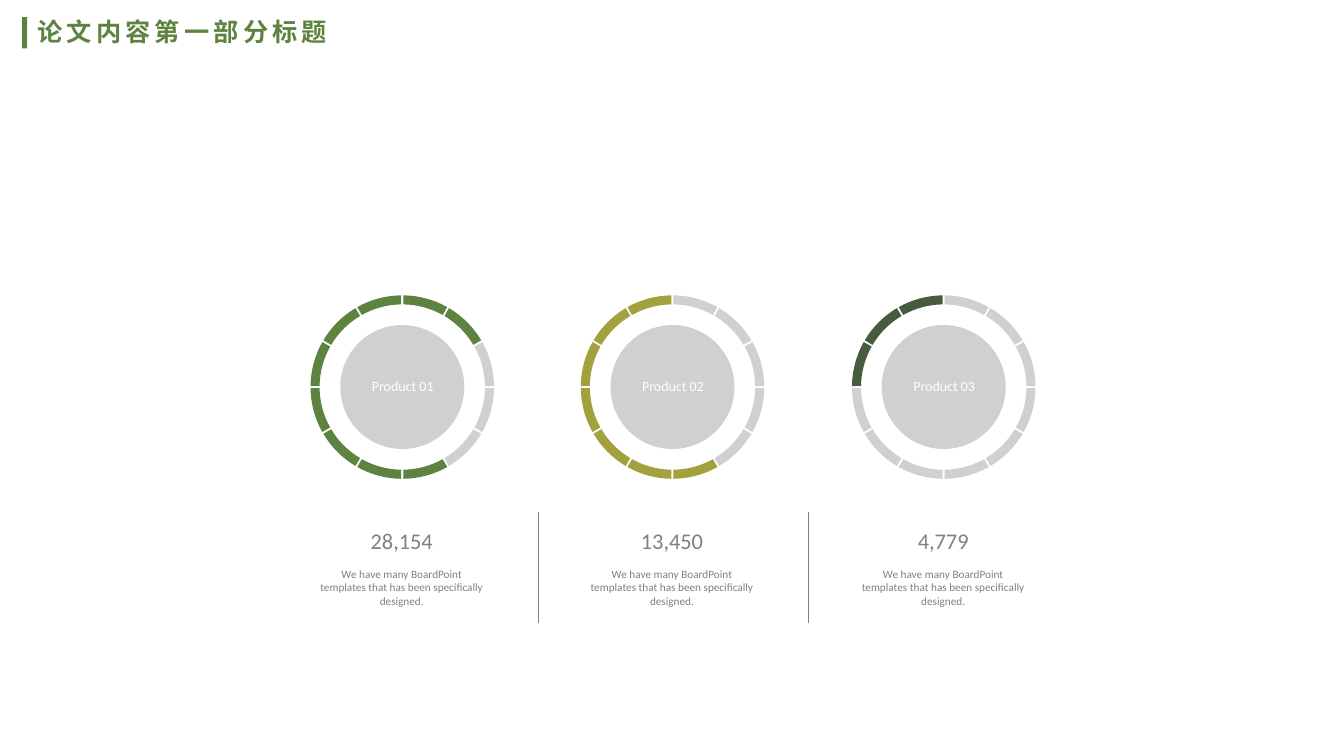
from math import asin, cos, pi, sin, tan

from lxml.etree import SubElement
from pptx import Presentation
from pptx.dml.color import RGBColor
from pptx.enum.shapes import MSO_CONNECTOR, MSO_SHAPE
from pptx.enum.text import MSO_ANCHOR, MSO_AUTO_SIZE, PP_ALIGN
from pptx.oxml.ns import qn
from pptx.oxml.xmlchemy import OxmlElement
from pptx.util import Inches, Pt

GREEN = RGBColor(0x5E, 0x82, 0x40)
OLIVE = RGBColor(0xA2, 0xA1, 0x3E)
DARK_GREEN = RGBColor(0x47, 0x5C, 0x3E)
INK = RGBColor(0x18, 0x17, 0x17)
GRAY = RGBColor(0x80, 0x80, 0x80)
WHITE = RGBColor(0xFF, 0xFF, 0xFF)

FONT = "Calibri"
RING_Y = 3.84
OUTER_RADIUS = 0.91
INNER_RADIUS = 0.82
DISC_SIZE = 1.23
HALF_GAP = 0.01
SEGMENTS = 12

DESCRIPTION = "We have many BoardPoint templates that has been specifically designed."
PRODUCTS = [
    ("Product 01", "28,154", 3.99, GREEN, 5, 9),
    ("Product 02", "13,450", 6.67, OLIVE, 5, 7),
    ("Product 03", "4,779", 9.36, DARK_GREEN, 9, 3),
]


def paint(shape, color, opacity=100):
    shape.shadow.inherit = False
    shape.fill.solid()
    shape.fill.fore_color.rgb = color
    shape.line.fill.background()
    if opacity < 100:
        tint = shape.element.spPr.find(qn("a:solidFill")).find(qn("a:srgbClr"))
        SubElement(tint, qn("a:alpha")).set("val", str(opacity * 1000))


def style(paragraph, size, color, align=PP_ALIGN.CENTER):
    paragraph.alignment = align
    paragraph.font.name = FONT
    paragraph.font.size = Pt(size)
    paragraph.font.color.rgb = color


def arc_points(center_x, radius, segment):
    span = 2 * pi / SEGMENTS
    trim = asin(HALF_GAP / radius)
    start, end = segment * span + trim, (segment + 1) * span - trim
    reach = 4 / 3 * tan((end - start) / 4)
    offsets = [
        (sin(start), -cos(start)),
        (sin(start) + reach * cos(start), -cos(start) + reach * sin(start)),
        (sin(end) - reach * cos(end), -cos(end) - reach * sin(end)),
        (sin(end), -cos(end)),
    ]
    return [
        (Inches(center_x + radius * x), Inches(RING_Y + radius * y)) for x, y in offsets
    ]


def bend(shape, edge, points):
    curve = OxmlElement("a:cubicBezTo")
    for x, y in points:
        point = SubElement(curve, qn("a:pt"))
        point.set("x", str(x - shape.left))
        point.set("y", str(y - shape.top))
    edge.getparent().replace(edge, curve)


def add_segment(shapes, center_x, segment, color, opacity):
    outer = arc_points(center_x, OUTER_RADIUS, segment)
    inner = arc_points(center_x, INNER_RADIUS, segment)[::-1]
    outline = shapes.build_freeform(*outer[0])
    outline.add_line_segments([outer[-1], inner[0], inner[-1]], close=True)
    piece = outline.convert_to_shape()
    edges = list(piece.element.iter(qn("a:lnTo")))
    bend(piece, edges[0], outer[1:])
    bend(piece, edges[2], inner[1:])
    paint(piece, color, opacity)


def add_ring(shapes, center_x, color, first, count):
    disc = shapes.add_shape(
        MSO_SHAPE.OVAL,
        Inches(center_x - DISC_SIZE / 2), Inches(RING_Y - DISC_SIZE / 2),
        Inches(DISC_SIZE), Inches(DISC_SIZE),
    )
    paint(disc, INK, 20)
    filled = {(first + offset) % SEGMENTS for offset in range(count)}
    for segment in range(SEGMENTS):
        tone = (color, 100) if segment in filled else (INK, 20)
        add_segment(shapes, center_x, segment, *tone)


def add_label(shapes, center_x, name):
    label = shapes.add_textbox(
        Inches(center_x - 0.41), Inches(3.7), Inches(0.83), Inches(0.27)
    ).text_frame
    label.word_wrap = False
    label.text = name
    style(label.paragraphs[0], 10, WHITE)


def add_figures(shapes, center_x, sales):
    figures = shapes.add_textbox(
        Inches(center_x - 0.83), Inches(5.23), Inches(1.65), Inches(0.8)
    ).text_frame
    figures.word_wrap = True
    figures.margin_left = figures.margin_right = 0
    figures.margin_top = figures.margin_bottom = 0
    figures.text = sales
    style(figures.paragraphs[0], 16, GRAY)
    description = figures.add_paragraph()
    description.text = DESCRIPTION
    description.space_before = Pt(9.5)
    style(description, 8, GRAY)


def add_divider(shapes, x):
    divider = shapes.add_connector(
        MSO_CONNECTOR.STRAIGHT, Inches(x), Inches(5.08), Inches(x), Inches(6.18)
    )
    divider.line.color.rgb = GRAY
    divider.line.width = Pt(0.5)
    SubElement(divider.element.spPr, qn("a:effectLst"))


def add_heading(shapes, text):
    title = shapes.title
    title.left, title.top = Inches(0.27), Inches(0.11)
    title.width, title.height = Inches(3.13), Inches(0.4)
    frame = title.text_frame
    frame.auto_size = MSO_AUTO_SIZE.NONE
    frame.vertical_anchor = MSO_ANCHOR.TOP
    frame.text = text
    heading = frame.paragraphs[0]
    style(heading, 18, GREEN, PP_ALIGN.LEFT)
    heading.font.bold = True
    for run in title.element.iter(qn("a:r")):
        run.get_or_add_rPr().set("spc", "300")
    accent = shapes.add_shape(
        MSO_SHAPE.RECTANGLE, Inches(0.22), Inches(0.17), Inches(0.05), Inches(0.31)
    )
    paint(accent, GREEN)


def main():
    deck = Presentation()
    deck.slide_width, deck.slide_height = Inches(13.33), Inches(7.5)
    shapes = deck.slides.add_slide(deck.slide_layouts[5]).shapes
    add_heading(shapes, "论文内容第一部分标题")
    for name, sales, center_x, color, first, count in PRODUCTS:
        add_ring(shapes, center_x, color, first, count)
        add_label(shapes, center_x, name)
        add_figures(shapes, center_x, sales)
    for _, _, center_x, *_ in PRODUCTS[:-1]:
        add_divider(shapes, center_x + 1.35)
    deck.save("out.pptx")


if __name__ == "__main__":
    main()
